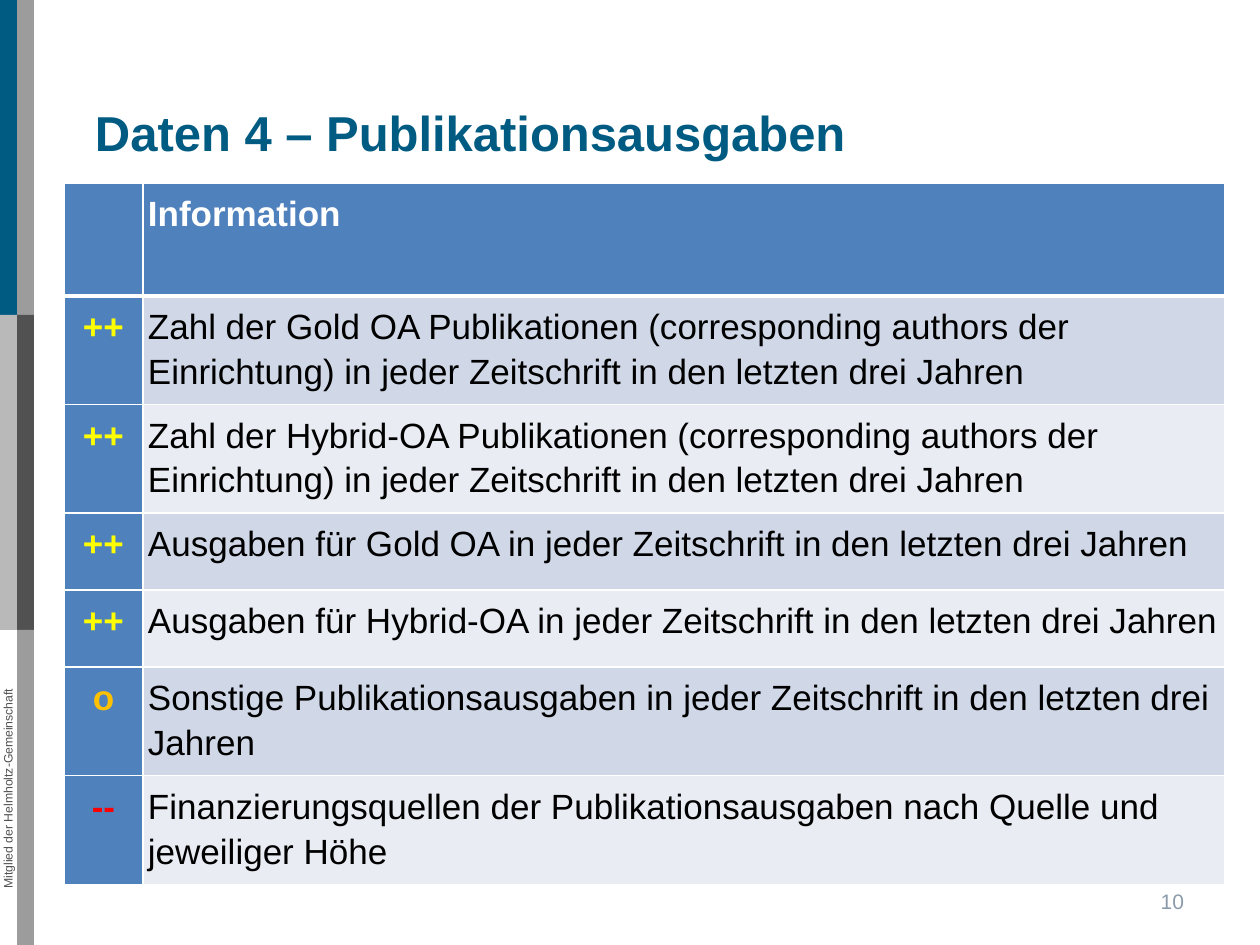
from lxml import etree
from pptx import Presentation
from pptx.dml.color import RGBColor
from pptx.enum.shapes import MSO_SHAPE
from pptx.enum.text import MSO_ANCHOR, PP_ALIGN
from pptx.oxml.ns import qn
from pptx.util import Emu, Pt

RECTANGLE = MSO_SHAPE.RECTANGLE
TOP, MIDDLE = MSO_ANCHOR.TOP, MSO_ANCHOR.MIDDLE
LEFT, CENTER, RIGHT = PP_ALIGN.LEFT, PP_ALIGN.CENTER, PP_ALIGN.RIGHT

COLORS = {
    "petrol": "005B82", "light": "B9B9B9", "medium": "9C9C9C", "dark": "515151",
    "number": "8B9BAC", "header": "4F81BD", "odd": "D0D8E7", "even": "E9ECF3",
    "white": "FFFFFF", "black": "000000",
    "++": "FFFF00", "o": "FFC000", "--": "FF0000",
}
FONT = "Arial"
TITLE = "Daten 4 – Publikationsausgaben"
MEMBERSHIP = "Mitglied der Helmholtz-Gemeinschaft"
PAGE_NUMBER = "10"
HEADER = "Information"
ENTRIES = [
    ("++", "Zahl der Gold OA Publikationen (corresponding authors der Einrichtung) in jeder Zeitschrift in den letzten drei Jahren"),
    ("++", "Zahl der Hybrid-OA Publikationen (corresponding authors der Einrichtung) in jeder Zeitschrift in den letzten drei Jahren"),
    ("++", "Ausgaben für Gold OA in jeder Zeitschrift in den letzten drei Jahren"),
    ("++", "Ausgaben für Hybrid-OA in jeder Zeitschrift in den letzten drei Jahren"),
    ("o", "Sonstige Publikationsausgaben in jeder Zeitschrift in den letzten drei Jahren"),
    ("--", "Finanzierungsquellen der Publikationsausgaben nach Quelle und jeweiliger Höhe"),
]
BAR_COLUMNS = [(None, "medium"), ("light", "dark"), ("petrol", "medium")]
BAR_WIDTH, BAR_HEIGHT = 17, 315
COLUMN_WIDTHS = [79, 1082]
ROW_HEIGHTS = [113, 84, 84, 77, 77, 84, 84]
TABLE_LEFT, TABLE_TOP = 64, 183
THIN, THICK = 0.96, 3


def px(value):
    return Emu(value * 914400 // 126)


def color(name):
    return RGBColor.from_string(COLORS[name])


def style(para, size, color_name, bold=False, align=LEFT):
    para.alignment = align
    para.font.name = FONT
    para.font.size = Pt(size)
    para.font.bold = bold
    para.font.color.rgb = color(color_name)


def add_text(page, place, text, size, color_name, bold=False, align=LEFT,
             anchor=TOP, margins=(0, 0, 0, 0)):
    box = page.shapes.add_textbox(*map(px, place))
    frame = box.text_frame
    frame.word_wrap = True
    frame.vertical_anchor = anchor
    (frame.margin_left, frame.margin_top,
     frame.margin_right, frame.margin_bottom) = map(px, margins)
    para = frame.paragraphs[0]
    para.text = text
    style(para, size, color_name, bold, align)
    return box


def add_bars(page):
    for row, pair in enumerate(reversed(BAR_COLUMNS)):
        for column, name in enumerate(pair):
            if name is None:
                continue
            bar = page.shapes.add_shape(
                RECTANGLE, px(column * BAR_WIDTH), px(row * BAR_HEIGHT),
                px(BAR_WIDTH), px(BAR_HEIGHT))
            bar.shadow.inherit = False
            bar.fill.solid()
            bar.fill.fore_color.rgb = color(name)
            bar.line.fill.background()


def set_borders(cell, top, bottom):
    properties = cell._tc.get_or_add_tcPr()
    widths = [("a:lnL", THIN), ("a:lnR", THIN), ("a:lnT", top), ("a:lnB", bottom)]
    for index, (tag, width) in enumerate(widths):
        line = etree.Element(qn(tag), w=str(Pt(width)))
        fill = etree.SubElement(line, qn("a:solidFill"))
        etree.SubElement(fill, qn("a:srgbClr"), val=COLORS["white"])
        properties.insert(index, line)


def fill_cell(cell, text, fill, text_color, bold, align):
    cell.margin_left = cell.margin_right = px(5)
    cell.margin_top = cell.margin_bottom = px(6)
    cell.fill.solid()
    cell.fill.fore_color.rgb = color(fill)
    para = cell.text_frame.paragraphs[0]
    para.text = text
    para.line_spacing = 1.15
    style(para, 20, text_color, bold, align)


def add_information_table(page):
    rows = [("", HEADER)] + ENTRIES
    table = page.shapes.add_table(
        len(rows), len(COLUMN_WIDTHS), px(TABLE_LEFT), px(TABLE_TOP),
        px(sum(COLUMN_WIDTHS)), px(sum(ROW_HEIGHTS))).table
    for column, width in zip(table.columns, COLUMN_WIDTHS):
        column.width = px(width)
    for index, (rating, text) in enumerate(rows):
        table.rows[index].height = px(ROW_HEIGHTS[index])
        rating_cell, text_cell = table.cell(index, 0), table.cell(index, 1)
        is_header = index == 0
        band = "header" if is_header else "odd" if index % 2 else "even"
        fill_cell(rating_cell, rating, "header", rating or "white", True, CENTER)
        fill_cell(text_cell, text, band, "white" if is_header else "black", is_header, LEFT)
        for cell in (rating_cell, text_cell):
            set_borders(cell, THICK if index == 1 else THIN, THICK if is_header else THIN)


def main():
    deck = Presentation()
    deck.slide_width, deck.slide_height = px(1260), px(945)
    page = deck.slides.add_slide(deck.slide_layouts[6])
    add_bars(page)
    membership = add_text(page, (-149, 781, 314, 15), MEMBERSHIP, 7, "dark", align=CENTER)
    membership.rotation = 270
    add_text(page, (95, 96, 1116, 79), TITLE, 28, "petrol", bold=True, margins=(0, 6, 0, 0))
    add_text(page, (903, 876, 294, 50), PAGE_NUMBER, 12, "number", align=RIGHT,
             anchor=MIDDLE, margins=(13, 6, 13, 6))
    add_information_table(page)
    deck.save("out.pptx")


if __name__ == "__main__":
    main()
